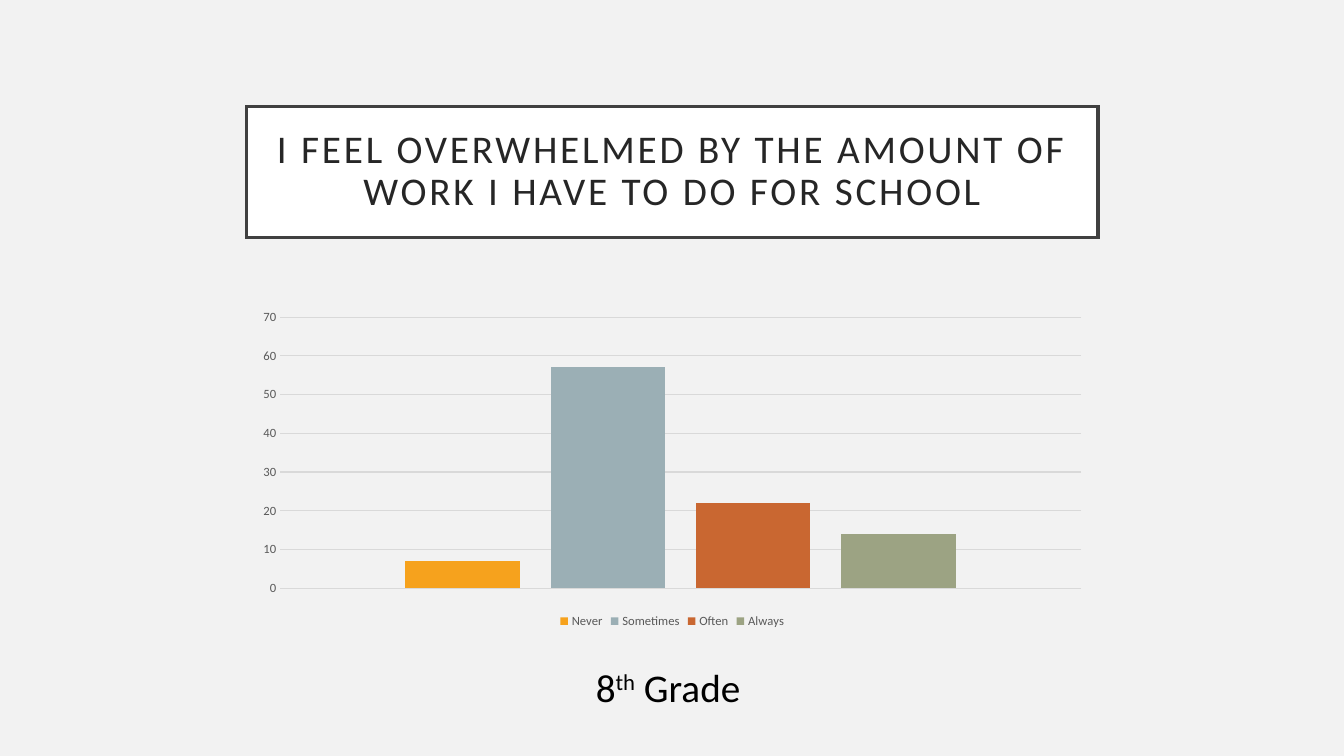
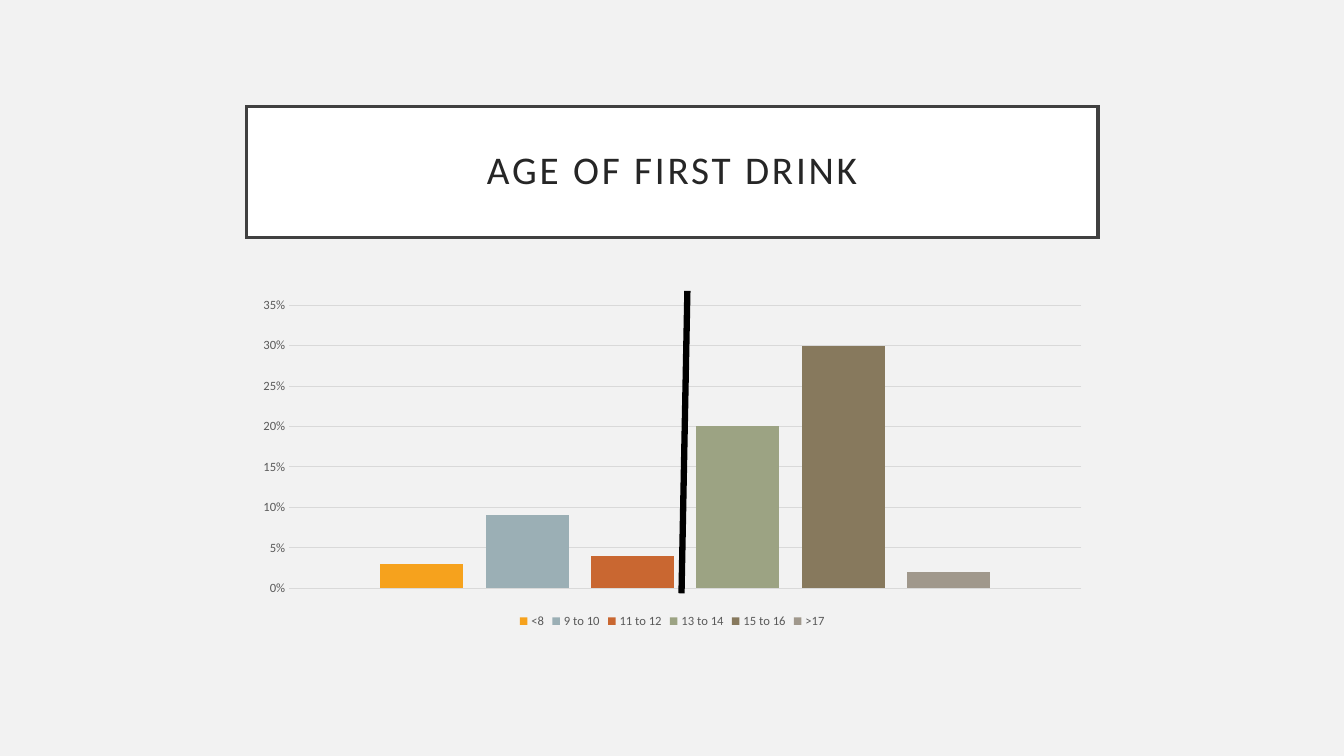
from pptx import Presentation
from pptx.chart import data as cd
from pptx.dml import color as col
from pptx.enum import chart as ch, shapes, text
from pptx.oxml import xmlchemy as xc
from pptx.util import Pt

FONT = "Calibri"
HUES = {
    "back": "F2F2F2", "box": "FFFFFF", "edge": "404040", "title": "262626",
    "ink": "000000", "label": "595959", "grid": "D9D9D9",
}
BARS = ["F6A21D", "9BAFB5", "C96731", "9CA383", "87795D", "A0988C"]

# Regions: left, top, width, height
HEAD = (176, 75.9, 608.4, 93.6)
PLOT = (176, 207.8, 608.4, 244)
NOTE = (380, 470, 194.4, 41)


def rgb(hue):
    return col.RGBColor.from_string(hue)


def paint(fill, hue):
    fill.solid()
    fill.fore_color.rgb = rgb(hue)


def style(font, size, hue):
    font.name, font.size = FONT, Pt(size)
    font.color.rgb = rgb(hue)


def add_run(para, words, size, hue, **marks):
    run = para.add_run()
    run.text = words
    style(run.font, size, hue)
    for key, val in marks.items():
        run._r.get_or_add_rPr().set(key, val)


def add_head(slide, box, words):
    """Framed title."""
    head = slide.shapes.title
    head.left, head.top, head.width, head.height = map(Pt, box)
    paint(head.fill, HUES["box"])
    paint(head.line.fill, HUES["edge"])
    head.line.width = Pt(2.5)
    # Square corners
    join = xc.OxmlElement("a:miter")
    join.set("lim", "800000")
    head._element.spPr.get_or_add_ln().append(join)
    frame = head.text_frame
    frame.word_wrap = True
    frame.auto_size = text.MSO_AUTO_SIZE.NONE
    frame.vertical_anchor = text.MSO_ANCHOR.MIDDLE
    frame.margin_left = frame.margin_right = Pt(14.4)
    frame.margin_top = frame.margin_bottom = Pt(14.4)
    para = frame.paragraphs[0]
    para.alignment = text.PP_ALIGN.CENTER
    para.line_spacing = 0.9
    add_run(para, words, 28, HUES["title"], spc="200")


def add_plot(slide, box, rows, form, step, top):
    """Column chart with one series per answer."""
    data = cd.CategoryChartData(number_format=form)
    data.categories = ["1"]
    for name, val in rows:
        data.add_series(name, [val])
    kind = ch.XL_CHART_TYPE.COLUMN_CLUSTERED
    chart = slide.shapes.add_chart(kind, *map(Pt, box), data).chart
    chart.has_title = False
    style(chart.font, 10, HUES["ink"])

    # Bars
    plot = chart.plots[0]
    plot.gap_width, plot.overlap = 219, -27
    plot.vary_by_categories = False
    for bar, hue in zip(plot.series, BARS):
        paint(bar.format.fill, hue)
        bar.invert_if_negative = False

    # Axes
    chart.category_axis.visible = False
    axis = chart.value_axis
    axis.minimum_scale, axis.maximum_scale = 0, top
    axis.major_unit = step
    axis.major_tick_mark = axis.minor_tick_mark = ch.XL_TICK_MARK.NONE
    axis.format.line.fill.background()
    axis.tick_labels.number_format = form
    axis.tick_labels.number_format_is_linked = False
    style(axis.tick_labels.font, 9, HUES["label"])
    grid = axis.major_gridlines.format.line
    paint(grid.fill, HUES["grid"])
    grid.width = Pt(0.75)

    # Legend
    chart.has_legend = True
    chart.legend.position = ch.XL_LEGEND_POSITION.BOTTOM
    chart.legend.include_in_layout = False
    style(chart.legend.font, 9, HUES["label"])


def add_note(slide, box, parts):
    """Centred caption; raised parts are superscript."""
    frame = slide.shapes.add_textbox(*map(Pt, box)).text_frame
    frame.word_wrap = True
    para = frame.paragraphs[0]
    para.alignment = text.PP_ALIGN.CENTER
    for words, base in parts:
        add_run(para, words, 28, HUES["ink"], baseline=base)


def add_split(slide, box):
    """Thick, slightly leaning line across the chart."""
    left, top, wide, high = box
    mid = left + wide / 2
    ends = (mid + 10.8, top, mid + 6.6, top + high - 28)
    line = slide.shapes.add_connector(shapes.MSO_CONNECTOR.STRAIGHT, *map(Pt, ends))
    paint(line.line.fill, HUES["ink"])
    line.line.width = Pt(4.5)
    line._element.spPr.append(xc.OxmlElement("a:effectLst"))


def add_page(deck, title, rows, form, step, top):
    slide = deck.slides.add_slide(deck.slide_layouts[5])
    add_head(slide, HEAD, title)
    add_plot(slide, PLOT, rows, form, step, top)
    return slide


def main():
    deck = Presentation()
    deck.slide_width, deck.slide_height = Pt(960), Pt(540)
    paint(deck.slide_master.background.fill, HUES["back"])

    # Workload
    rows = [("Never", 7), ("Sometimes", 57), ("Often", 22), ("Always", 14)]
    title = "I FEEL OVERWHELMED BY THE AMOUNT OF WORK I HAVE TO DO FOR SCHOOL"
    page = add_page(deck, title, rows, "General", 10, 75)
    add_note(page, NOTE, [("8", "0"), ("th", "30000"), (" Grade", "0")])

    # First drink
    rows = [("<8", 0.03), ("9 to 10", 0.09), ("11 to 12", 0.04),
            ("13 to 14", 0.2), ("15 to 16", 0.3), (">17", 0.02)]
    page = add_page(deck, "AGE OF FIRST DRINK", rows, "0%", 0.05, 0.35)
    add_split(page, PLOT)

    deck.save("out.pptx")


if __name__ == "__main__":
    main()
